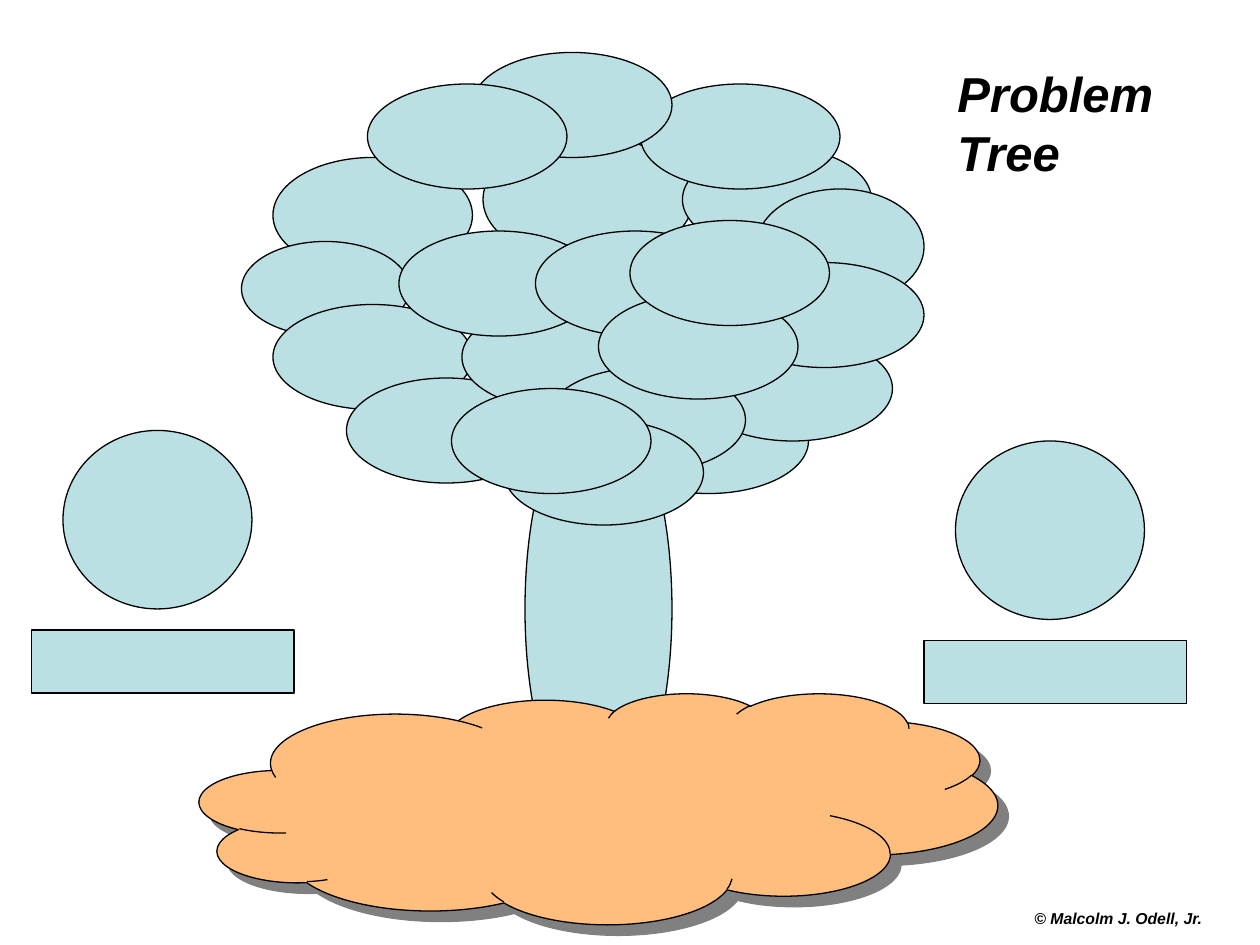
"""Build the Problem Tree slide: leaves, trunk, ground and four side shapes."""
from lxml.etree import SubElement
from pptx import Presentation
from pptx.dml.color import RGBColor
from pptx.enum.shapes import MSO_SHAPE
from pptx.enum.text import MSO_ANCHOR, PP_ALIGN
from pptx.oxml.ns import qn
from pptx.util import Emu, Pt

PX = 7620
SLIDE = (1200, 900)
BLUE, ORANGE, BLACK, GREY = "BBE0E3", "FFBE7D", "000000", "808080"

BACK_LEAF = (460, 130, 200, 120)
TRUNK = (500, 380, 140, 400)
OUTER_LEAVES = [
    (260, 150, 190, 110),
    (650, 140, 180, 100),
    (720, 180, 160, 110),
    (230, 230, 160, 90),
]
LEAF_SIZE = (190, 100)
LEAF_CORNERS = [
    (260, 290), (330, 360), (440, 290), (380, 220),
    (510, 220), (580, 370), (660, 320), (690, 250),
    (520, 350), (610, 80), (450, 50), (350, 80),
    (480, 400), (430, 370), (570, 280), (600, 210),
]
GROUND = (190, 660, 760, 220)
CIRCLES = [(910, 420, 180, 170), (60, 410, 180, 170)]
LABEL_BOXES = [(30, 600, 250, 60), (880, 610, 250, 60)]
TITLE = ("Problem\vTree", (900, 50, 220, 134))
CREDIT = ("© Malcolm J. Odell, Jr.", (950, 860, 230, 23))


def color(value):
    return RGBColor.from_string(value)


def lengths(box):
    return [Emu(value * PX) for value in box]


def add_outline(slide, kind, box, fill=BLUE):
    shape = slide.shapes.add_shape(kind, *lengths(box))
    shape.shadow.inherit = False
    shape.fill.solid()
    shape.fill.fore_color.rgb = color(fill)
    shape.line.color.rgb = color(BLACK)
    shape.line.width = Pt(0.75)
    return shape


def add_shadow(shape, value):
    effects = shape._element.spPr.find(qn("a:effectLst"))
    shadow = SubElement(effects, qn("a:outerShdw"), dist=str(Pt(8.5)),
                        dir="2700000", algn="ctr", rotWithShape="0")
    SubElement(shadow, qn("a:srgbClr"), val=value)


def add_text(slide, text, box, size, italic, align, anchor):
    frame = slide.shapes.add_textbox(*lengths(box)).text_frame
    frame.word_wrap = True
    frame.vertical_anchor = anchor
    paragraph = frame.paragraphs[0]
    paragraph.text = text
    paragraph.alignment = align
    font = paragraph.font
    font.name, font.size = "Arial", Pt(size)
    font.bold, font.italic = True, italic
    font.color.rgb = color(BLACK)


def main():
    presentation = Presentation()
    presentation.slide_width, presentation.slide_height = lengths(SLIDE)
    slide = presentation.slides.add_slide(presentation.slide_layouts[6])

    add_text(slide, *CREDIT, 9, True, PP_ALIGN.CENTER, MSO_ANCHOR.TOP)
    leaves = [corner + LEAF_SIZE for corner in LEAF_CORNERS]
    for box in [BACK_LEAF, TRUNK] + OUTER_LEAVES + leaves:
        add_outline(slide, MSO_SHAPE.OVAL, box)
    add_shadow(add_outline(slide, MSO_SHAPE.CLOUD, GROUND, ORANGE), GREY)
    for box in CIRCLES:
        add_outline(slide, MSO_SHAPE.OVAL, box)
    for box in LABEL_BOXES:
        add_outline(slide, MSO_SHAPE.RECTANGLE, box)
    add_text(slide, *TITLE, 28, True, PP_ALIGN.LEFT, MSO_ANCHOR.MIDDLE)

    presentation.save("out.pptx")


if __name__ == "__main__":
    main()
